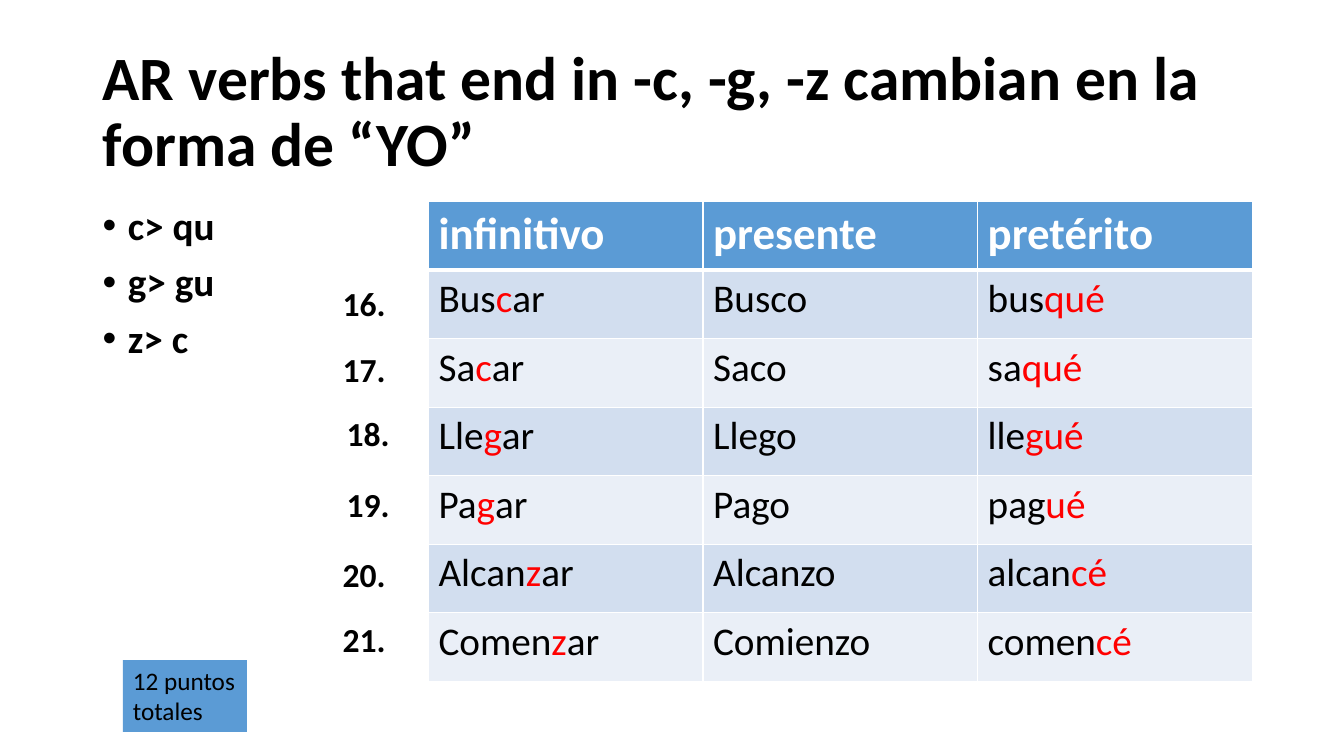
from lxml import etree
from pptx import Presentation
from pptx.dml.color import RGBColor
from pptx.enum.shapes import MSO_SHAPE
from pptx.enum.text import MSO_ANCHOR, PP_ALIGN
from pptx.oxml.ns import qn
from pptx.util import Inches, Pt

RECTANGLE = MSO_SHAPE.RECTANGLE
MIDDLE, TOP = MSO_ANCHOR.MIDDLE, MSO_ANCHOR.TOP
LEFT = PP_ALIGN.LEFT

# Content: "|" separates plain letters from the highlighted ones
TITLE = "AR verbs that end in -c, -g, -z cambian en la forma de “YO”"
RULES = ["c> qu", "g> gu", "z> c"]
HEADERS = ["infinitivo", "presente", "pretérito"]
VERBS = [
    ("Bus|c|ar", "Busco", "bus|qué"),
    ("Sa|c|ar", "Saco", "sa|qué"),
    ("Lle|g|ar", "Llego", "lle|gué"),
    ("Pa|g|ar", "Pago", "pag|ué"),
    ("Alcan|z|ar", "Alcanzo", "alcan|cé"),
    ("Comen|z|ar", "Comienzo", "comen|cé"),
]
NUMBERS = [  # label, left, top
    ("16.", 3.3, 2.76), ("17.", 3.3, 3.41), ("18.", 3.34, 4.05),
    ("19.", 3.34, 4.75), ("20.", 3.3, 5.45), ("21.", 3.3, 6.09),
]
POINTS = "12 puntos totales"

FONT = "Calibri"
BLACK, WHITE, RED, BLUE = "000000", "FFFFFF", "FF0000", "5B9BD5"
BANDS = ["D2DEEF", "EAEFF7"]
TABLE_LEFT, TABLE_TOP, TABLE_WIDTH, TABLE_HEIGHT = 4.25, 2, 8.17, 4.76


def color(code):
    return RGBColor.from_string(code)


def paint(target, code):
    target.fill.solid()
    target.fill.fore_color.rgb = color(code)


def add_span(para, text, size, code=BLACK, bold=False):
    span = para.add_run()
    span.text = text
    span.font.name = FONT
    span.font.size = Pt(size)
    span.font.bold = bold
    span.font.color.rgb = color(code)


def add_box(left, top, width, height, lines, size, anchor=TOP):
    box = page.shapes.add_textbox(
        Inches(left), Inches(top), Inches(width), Inches(height))
    frame = box.text_frame
    frame.word_wrap = True
    frame.vertical_anchor = anchor
    for index, line in enumerate(lines):
        para = frame.add_paragraph() if index else frame.paragraphs[0]
        add_span(para, line, size, bold=True)
    return frame.paragraphs


def add_bullet(para):
    properties = para._p.get_or_add_pPr()
    properties.set("marL", str(Inches(0.25)))
    properties.set("indent", str(Inches(-0.25)))
    etree.SubElement(properties, qn("a:buFont"), typeface="Arial")
    etree.SubElement(properties, qn("a:buChar"), char="•")


def add_borders(cell, bottom, top):
    properties = cell._tc.get_or_add_tcPr()
    widths = {"a:lnL": 1, "a:lnR": 1, "a:lnT": top, "a:lnB": bottom}
    for index, (side, width) in enumerate(widths.items()):
        line = etree.Element(qn(side), w=str(Pt(width)))
        fill = etree.SubElement(line, qn("a:solidFill"))
        etree.SubElement(fill, qn("a:srgbClr"), val=WHITE)
        properties.insert(index, line)


deck = Presentation()
deck.slide_width, deck.slide_height = Inches(13.33), Inches(7.5)
page = deck.slides.add_slide(deck.slide_layouts[6])

# Title and spelling rules
title = add_box(0.92, 0.4, 11.5, 1.45, [TITLE], 44, MIDDLE)
title[0].line_spacing = 0.9
for para in add_box(0.92, 2, 5.67, 4.76, RULES, 28):
    para.line_spacing = 0.9
    para.space_before = Pt(10)
    add_bullet(para)

# Verb table
rows = [HEADERS] + VERBS
table = page.shapes.add_table(
    len(rows), len(HEADERS), Inches(TABLE_LEFT), Inches(TABLE_TOP),
    Inches(TABLE_WIDTH), Inches(TABLE_HEIGHT)).table
for row_index, row in enumerate(rows):
    header = row_index == 0
    for column_index, text in enumerate(row):
        cell = table.cell(row_index, column_index)
        paint(cell, BLUE if header else BANDS[(row_index - 1) % 2])
        add_borders(cell, 3 if header else 1, 3 if row_index == 1 else 1)
        para = cell.text_frame.paragraphs[0]
        for part_index, part in enumerate(text.split("|")):
            if header:
                add_span(para, part, 32, WHITE, True)
            else:
                add_span(para, part, 28, RED if part_index % 2 else BLACK)

# Question numbers
for label, left, top in NUMBERS:
    add_box(left, top, 0.91, 0.5, [label], 24)

# Points badge
badge = page.shapes.add_shape(
    RECTANGLE, Inches(1.22), Inches(6.55), Inches(1.23), Inches(0.71))
badge.shadow.inherit = False
paint(badge, BLUE)
badge.line.fill.background()
badge.text_frame.word_wrap = True
badge.text_frame.vertical_anchor = TOP
para = badge.text_frame.paragraphs[0]
para.alignment = LEFT
add_span(para, POINTS, 18)

deck.save("out.pptx")
